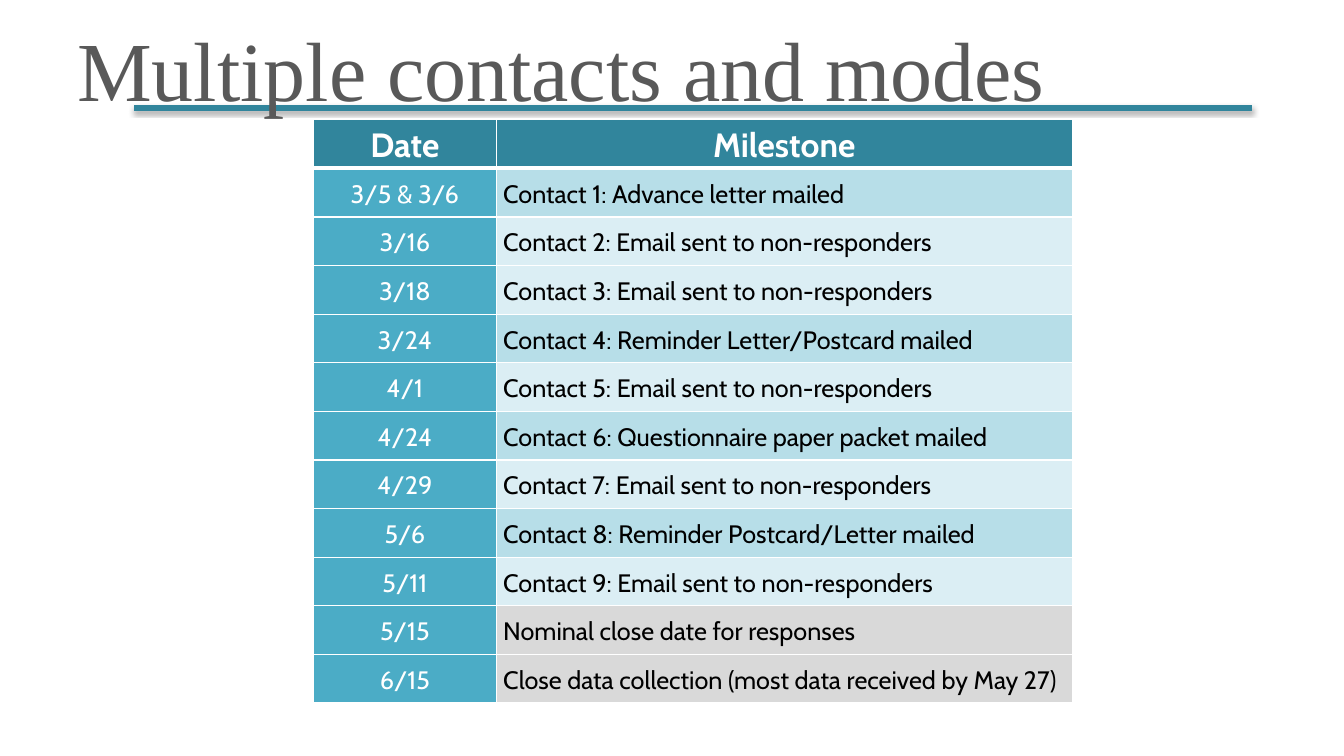
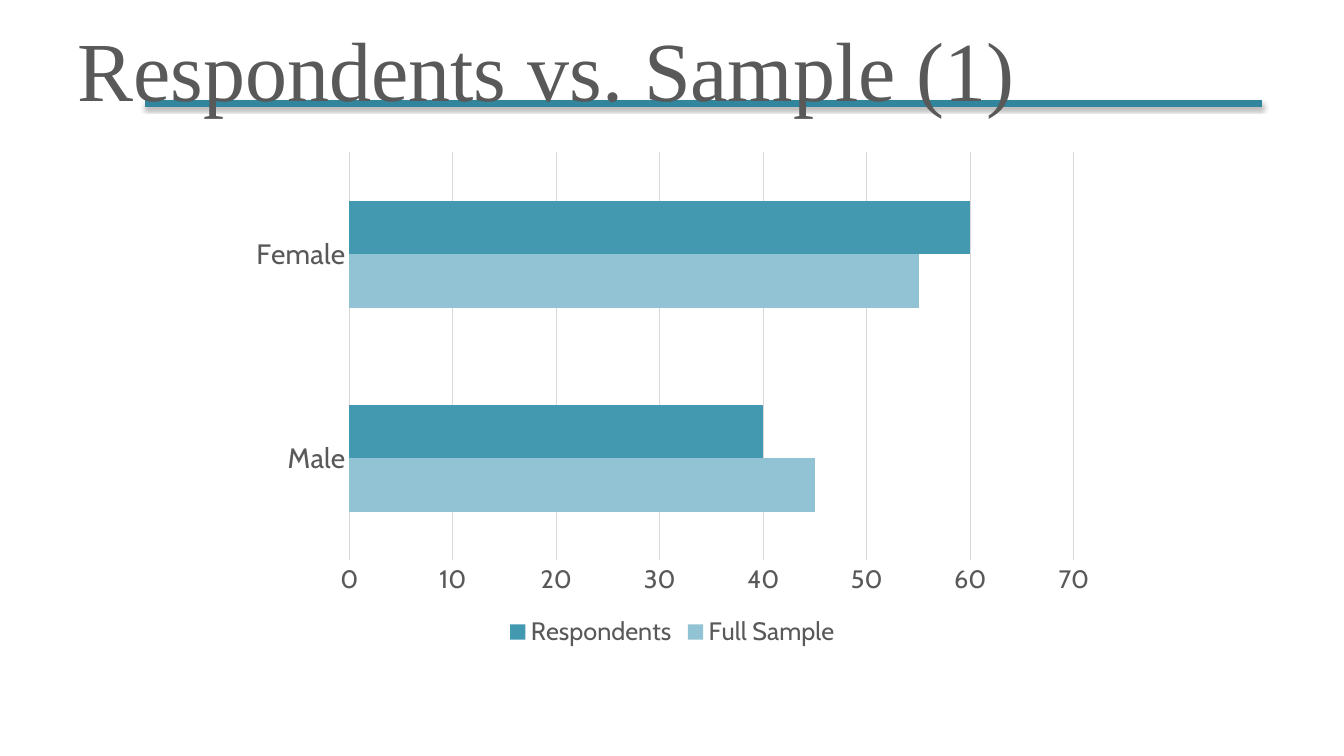
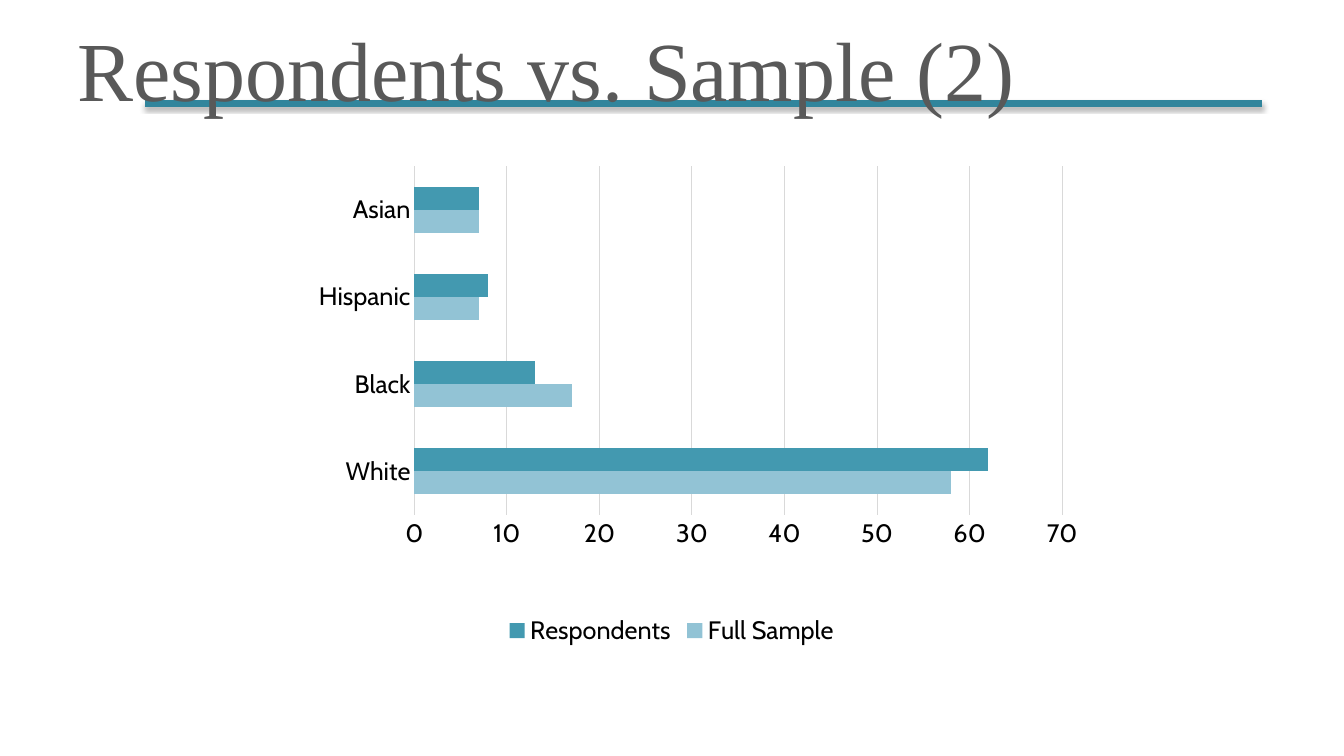
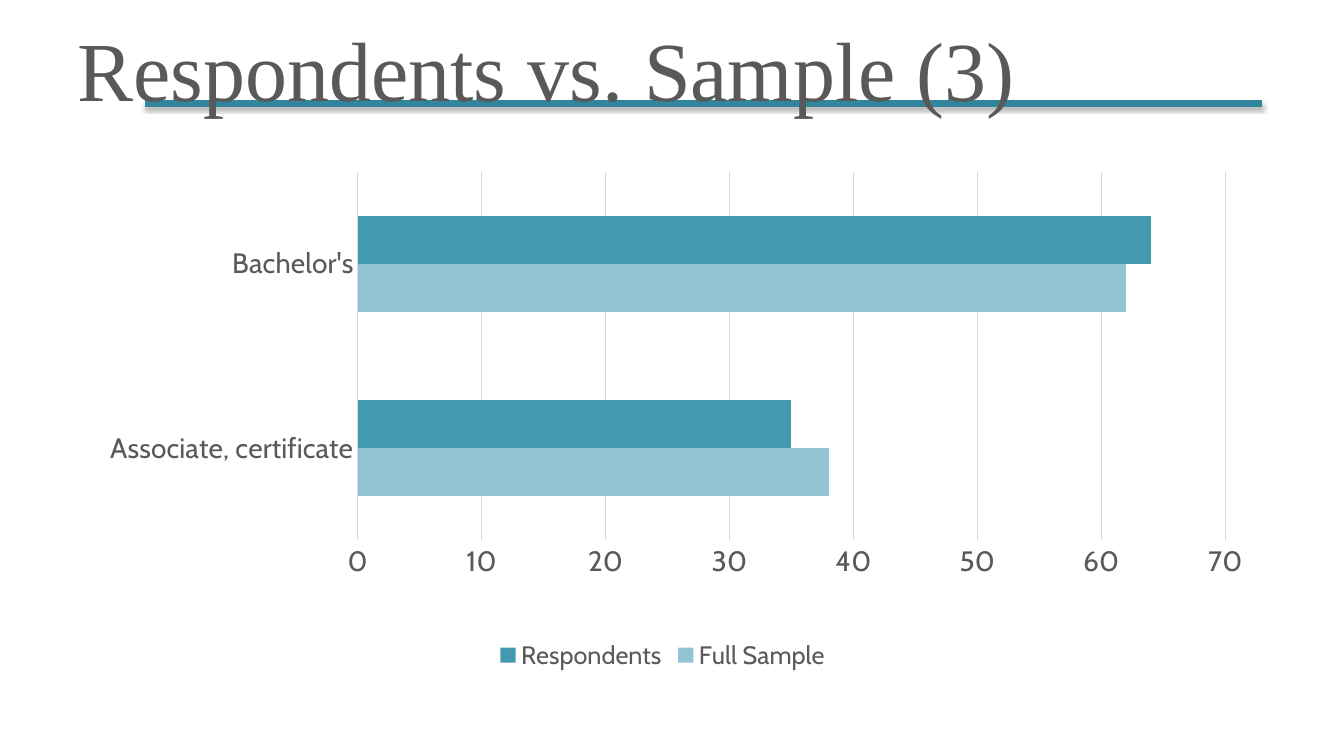
from lxml.etree import SubElement
from pptx import Presentation
from pptx.chart.data import CategoryChartData
from pptx.dml.color import RGBColor
from pptx.enum.chart import XL_CHART_TYPE, XL_LEGEND_POSITION, XL_TICK_MARK
from pptx.enum.shapes import MSO_CONNECTOR
from pptx.enum.text import MSO_ANCHOR, MSO_AUTO_SIZE, PP_ALIGN
from pptx.oxml import parse_xml
from pptx.oxml.ns import nsdecls, qn
from pptx.util import Pt

COLORS = {
    "teal": "31859C", "date": "4BACC6", "mail": "B7DEE8", "email": "DBEEF4",
    "close": "D9D9D9", "grid": "D9D9D9", "grey": "595959", "white": "FFFFFF",
    "black": "000000", "sample": "92C3D5", "respondents": "4399B0",
}
TITLE_FONT, BODY_FONT = "Times New Roman", "Cabin"

HEADINGS = ("Date", "Milestone")
MILESTONES = [
    ("3/5 & 3/6", "Contact 1: Advance letter mailed"),
    ("3/16", "Contact 2: Email sent to non-responders"),
    ("3/18", "Contact 3: Email sent to non-responders"),
    ("3/24", "Contact 4: Reminder Letter/Postcard mailed"),
    ("4/1", "Contact 5: Email sent to non-responders"),
    ("4/24", "Contact 6: Questionnaire paper packet mailed"),
    ("4/29", "Contact 7: Email sent to non-responders"),
    ("5/6", "Contact 8: Reminder Postcard/Letter mailed"),
    ("5/11", "Contact 9: Email sent to non-responders"),
    ("5/15", "Nominal close date for responses"),
    ("6/15", "Close data collection (most data received by May 27)"),
]
COLUMN_WIDTHS = (130.5, 411.5)
ROW_HEIGHT = 34.75

# box is left, top, width, height in points; plot is the same as shares of the box
COMPARISONS = [
    {"title": "Respondents vs. Sample (1)", "box": (168.5, 101.5, 623.5, 364.5),
     "plot": (0.13, 0.02, 0.83, 0.8), "ink": "grey", "category_size": 20, "value_size": 18,
     "groups": ["Male", "Female"], "sample": [45, 55], "respondents": [40, 60]},
    {"title": "Respondents vs. Sample (2)", "box": (139.5, 104.5, 680.5, 360.5),
     "plot": (0.23, 0.04, 0.68, 0.69), "ink": "black", "category_size": 18, "value_size": 18,
     "groups": ["White", "Black", "Hispanic", "Asian"],
     "sample": [58, 17, 7, 7], "respondents": [62, 13, 8, 7]},
    {"title": "Respondents vs. Sample (3)", "box": (54.5, 111.5, 837.5, 371),
     "plot": (0.24, 0.03, 0.74, 0.71), "ink": "grey", "category_size": 20, "value_size": 20,
     "groups": ["Associate, certificate", "Bachelor's"],
     "sample": [38, 62], "respondents": [35, 64]},
]


def rgb(name):
    return RGBColor.from_string(COLORS[name])


def set_font(font, face, size, color, bold=False):
    font.name, font.size, font.bold = face, Pt(size), bold
    font.color.rgb = rgb(color)


def add_rule(slide, left, top, width=798):
    """Draw the shadowed line that runs behind the title."""
    rule = slide.shapes.add_connector(
        MSO_CONNECTOR.STRAIGHT, Pt(left), Pt(top), Pt(left + width), Pt(top))
    rule.line.color.rgb = rgb("teal")
    rule.line.width = Pt(4.5)
    rule._element.spPr.append(parse_xml(
        f'<a:effectLst {nsdecls("a")}><a:outerShdw blurRad="{Pt(3.1)}" dist="{Pt(1.6)}" '
        f'dir="5400000" rotWithShape="0"><a:srgbClr val="{COLORS["black"]}">'
        '<a:alpha val="38000"/></a:srgbClr></a:outerShdw></a:effectLst>'))
    slide.shapes._spTree.insert(2, rule._element)


def add_titled_slide(prs, text, rule_left=103.5, rule_top=74, title_width=893):
    slide = prs.slides.add_slide(prs.slide_layouts[5])
    title = slide.shapes.title
    title.left, title.top, title.width, title.height = Pt(48), Pt(3.5), Pt(title_width), Pt(90)
    frame = title.text_frame
    frame.text = text
    frame.auto_size = MSO_AUTO_SIZE.NONE
    frame.vertical_anchor = MSO_ANCHOR.MIDDLE
    paragraph = frame.paragraphs[0]
    paragraph.alignment = PP_ALIGN.LEFT
    set_font(paragraph.font, TITLE_FONT, 60, "grey")
    add_rule(slide, rule_left, rule_top)
    return slide


def set_borders(cell, **widths):
    properties = cell._tc.get_or_add_tcPr()
    for index, side in enumerate("LRTB"):
        properties.insert(index, parse_xml(
            f'<a:ln{side} {nsdecls("a")} w="{Pt(widths.get(side, 1))}"><a:solidFill>'
            f'<a:srgbClr val="{COLORS["white"]}"/></a:solidFill></a:ln{side}>'))


def fill_cell(cell, text, fill, size, color, centred, bold=False):
    cell.text = text
    cell.fill.solid()
    cell.fill.fore_color.rgb = rgb(fill)
    cell.vertical_anchor = MSO_ANCHOR.MIDDLE
    cell.margin_left = cell.margin_right = Pt(5)
    cell.margin_top, cell.margin_bottom = Pt(0.75), Pt(0)
    paragraph = cell.text_frame.paragraphs[0]
    paragraph.alignment = PP_ALIGN.CENTER if centred else PP_ALIGN.LEFT
    paragraph.line_spacing = 1.07
    paragraph.space_after = Pt(8)
    set_font(paragraph.font, BODY_FONT, size, color, bold)


def milestone_fill(milestone):
    if not milestone.startswith("Contact"):
        return "close"
    return "email" if "Email" in milestone else "mail"


def add_schedule(slide):
    row_count = len(MILESTONES) + 1
    table = slide.shapes.add_table(
        row_count, 2, Pt(224), Pt(85.5),
        Pt(sum(COLUMN_WIDTHS)), Pt(ROW_HEIGHT * row_count)).table
    table.horz_banding = False
    for column, width in zip(table.columns, COLUMN_WIDTHS):
        column.width = Pt(width)
    for row in table.rows:
        row.height = Pt(ROW_HEIGHT)
    for column, heading in enumerate(HEADINGS):
        cell = table.cell(0, column)
        fill_cell(cell, heading, "teal", 24, "white", True, bold=True)
        set_borders(cell, B=3)
    for row, (date, milestone) in enumerate(MILESTONES, 1):
        date_cell, milestone_cell = table.cell(row, 0), table.cell(row, 1)
        fill_cell(date_cell, date, "date", 18, "white", True)
        fill_cell(milestone_cell, milestone, milestone_fill(milestone), 18, "black", False)
        for cell in (date_cell, milestone_cell):
            set_borders(cell, T=3 if row == 1 else 1)


def place_plot(chart, shares):
    """Fix the inner plot area at shares (x, y, w, h) of the chart."""
    area = chart._chartSpace.chart.plotArea
    for old in area.findall(qn("c:layout")):
        area.remove(old)
    layout = parse_xml(f'<c:layout {nsdecls("c")}><c:manualLayout/></c:layout>')
    settings = [("layoutTarget", "inner"), ("xMode", "edge"), ("yMode", "edge"),
                *zip("xywh", shares)]
    for tag, value in settings:
        SubElement(layout[0], qn(f"c:{tag}")).set("val", str(value))
    area.insert(0, layout)


def add_comparison(slide, comparison):
    ink = comparison["ink"]
    data = CategoryChartData()
    data.categories = comparison["groups"]
    data.add_series("Full Sample", comparison["sample"])
    data.add_series("Respondents", comparison["respondents"])
    chart = slide.shapes.add_chart(
        XL_CHART_TYPE.BAR_CLUSTERED, *map(Pt, comparison["box"]), data).chart
    chart.has_title = False
    set_font(chart.font, BODY_FONT, comparison["value_size"], "black")
    place_plot(chart, comparison["plot"])

    bars = chart.plots[0]
    bars.gap_width = 182
    bars.vary_by_categories = False
    for series, color in zip(bars.series, ("sample", "respondents")):
        series.format.fill.solid()
        series.format.fill.fore_color.rgb = rgb(color)

    groups, percent = chart.category_axis, chart.value_axis
    for axis, size in ((groups, comparison["category_size"]), (percent, comparison["value_size"])):
        axis.major_tick_mark = axis.minor_tick_mark = XL_TICK_MARK.NONE
        set_font(axis.tick_labels.font, BODY_FONT, size, ink)
    percent.minimum_scale, percent.maximum_scale, percent.major_unit = 0, 70, 10
    percent.has_major_gridlines = True
    percent.format.line.fill.background()
    for line in (groups.format.line, percent.major_gridlines.format.line):
        line.color.rgb = rgb("grid")
        line.width = Pt(0.75)

    chart.has_legend = True
    chart.legend.position = XL_LEGEND_POSITION.BOTTOM
    chart.legend.include_in_layout = False
    set_font(chart.legend.font, BODY_FONT, 18, ink)


def main():
    prs = Presentation()
    prs.slide_width, prs.slide_height = Pt(960), Pt(540)
    schedule = add_titled_slide(prs, "Multiple contacts and modes",
                                rule_left=96, rule_top=77, title_width=864)
    add_schedule(schedule)
    for comparison in COMPARISONS:
        add_comparison(add_titled_slide(prs, comparison["title"]), comparison)
    prs.save("out.pptx")


if __name__ == "__main__":
    main()
